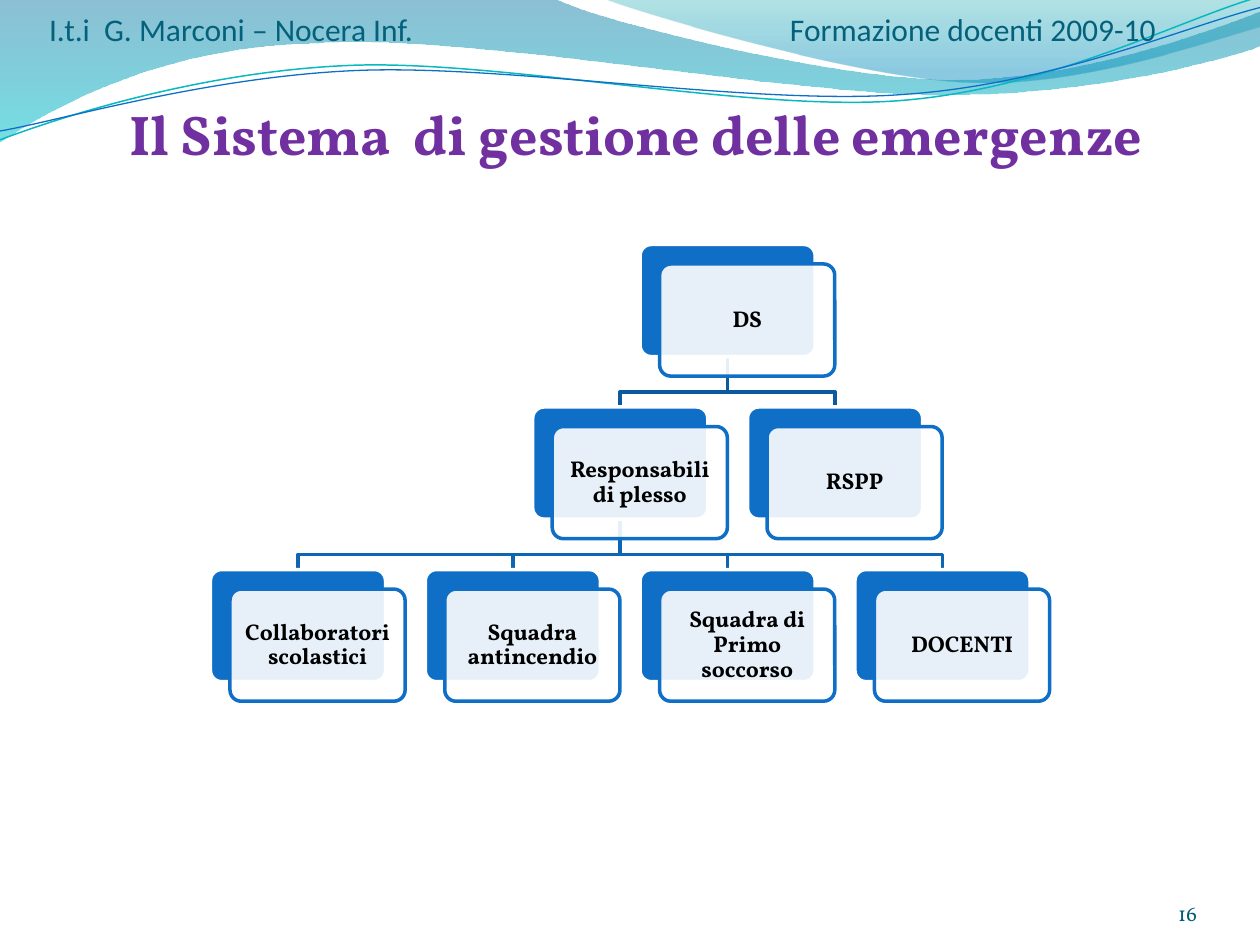
from lxml.etree import SubElement
from pptx import Presentation
from pptx.dml.color import RGBColor
from pptx.enum.shapes import MSO_SHAPE
from pptx.enum.text import MSO_ANCHOR, PP_ALIGN
from pptx.oxml.ns import qn
from pptx.util import Inches, Pt

BLUE = RGBColor(0x0F, 0x6F, 0xC6)
NAVY = RGBColor(0x0C, 0x59, 0x9F)
MID = RGBColor(0x0E, 0x65, 0xB4)
AQUA = RGBColor(0x0A, 0xB8, 0xBF)
TEAL = RGBColor(0x04, 0x61, 0x7B)
DARK = RGBColor(0x04, 0x5D, 0x75)
PURPLE = RGBColor(0x70, 0x30, 0xA0)
WHITE = RGBColor(0xFF, 0xFF, 0xFF)
BLACK = RGBColor(0, 0, 0)
SERIF, SANS = "Vollkorn", "Calibri"

# Chart grid: first card, pitch between cards, card size, front card offset
LEFT, TOP = 1.67, 1.94
COL, ROW = 1.705, 1.29
WIDE, HIGH = 1.39, 0.89
SHIFT = 0.155
DROP = 0.28

# name: (text, column, row, parent)
CARDS = {
    "ds": ("DS", 2, 0, None),
    "resp": ("Responsabili di plesso", 1.5, 1, "ds"),
    "coll": ("Collaboratori scolastici", 0, 2, "resp"),
    "fire": ("Squadra antincendio", 1, 2, "resp"),
    "aid": ("Squadra di Primo soccorso", 2, 2, "resp"),
    "doc": ("DOCENTI", 3, 2, "resp"),
    "rspp": ("RSPP", 2.5, 1, "ds"),
}

# A part of three points is a cubic curve, a part of one point a straight line.
# Each band: start, parts, gradient stops
BANDS = [
    ((0, 0),
     [[(4.4, -0.01)],
      [(4.76, 0.17), (6.64, 0.63), (7.58, 0.63)],
      [(8.53, 0.63), (9.58, 0.26), (10, 0.09)],
      [(10.01, 0.36)],
      [(9.83, 0.44), (8.7, 0.76), (7.46, 0.75)],
      [(6.22, 0.75), (3.82, 0.28), (2.57, 0.34)],
      [(1.29, 0.36), (0.46, 0.83), (-0.01, 1.13)]],
     [(0, RGBColor(0, 0x74, 0xA1), 45), (1, RGBColor(0, 0xC6, 0xCF), 55)]),
    ((4.79, -0.01),
     [[(5.09, 0.11), (6.82, 0.62), (7.69, 0.65)],
      [(8.56, 0.69), (9.61, 0.32), (10, 0.21)],
      [(10, 0)]],
     [(0, RGBColor(0, 0xA1, 0xA9), 30), (0.8, RGBColor(0, 0x8B, 0xBF), 45)]),
]
# Each wave: start, parts, colour, width
WAVES = [
    ((0, 1.11),
     [[(0.48, 0.93), (1.58, 0.57), (2.77, 0.52)],
      [(3.95, 0.47), (5.93, 0.89), (7.13, 0.8)],
      [(8.33, 0.71), (9.38, 0.15), (9.98, -0.02)]], AQUA, 0.85),
    ((0, 1.04),
     [[(0.47, 0.96), (1.64, 0.61), (2.83, 0.56)],
      [(4.03, 0.51), (5.97, 0.84), (7.17, 0.75)],
      [(8.36, 0.67), (9.41, 0.21), (10, 0.06)]], BLUE, 0.75),
]


def outline(slide, start, parts, close=False):
    """Draw lines, then join each three-point part into one curve."""
    pen = slide.shapes.build_freeform(*map(Inches, start))
    pts = [(Inches(x), Inches(y)) for part in parts for x, y in part]
    pen.add_line_segments(pts, close=close)
    shape = pen.convert_to_shape()
    shape.shadow.inherit = False
    lines = iter(list(shape._element.iter(qn("a:lnTo"))))
    for part in parts:
        group = [next(lines) for _ in part]
        if len(group) == 3:
            first = group[0]
            first.tag = qn("a:cubicBezTo")
            for node in group[1:]:
                first.append(node[0])
                node.getparent().remove(node)
    return shape


def fade(color, share):
    """Set the opacity, in percent, of every RGB colour under an element."""
    for node in color.iter(qn("a:srgbClr")):
        SubElement(node, qn("a:alpha"), val=str(share * 1000))


def add_band(slide, start, parts, stops):
    band = outline(slide, start, parts, close=True)
    band.line.fill.background()
    band.fill.gradient()
    band.fill.gradient_angle = 270
    nodes = band._element.spPr.iter(qn("a:gs"))
    for stop, node, (at, color, share) in zip(
            band.fill.gradient_stops, nodes, stops):
        stop.position = at
        stop.color.rgb = color
        fade(node, share)


def add_line(slide, start, parts, color, width):
    line = outline(slide, start, parts)
    line.fill.background()
    line.line.color.rgb = color
    line.line.width = Pt(width)


def write(frame, text, size, color, font=SERIF, bold=False,
          align=PP_ALIGN.LEFT, anchor=MSO_ANCHOR.BOTTOM, pads=(0, 0.05, 0, 0)):
    frame.word_wrap = True
    frame.vertical_anchor = anchor
    (frame.margin_left, frame.margin_top,
     frame.margin_right, frame.margin_bottom) = map(Inches, pads)
    para = frame.paragraphs[0]
    para.alignment = align
    run = para.add_run()
    run.text = text
    run.font.size, run.font.bold, run.font.name = Pt(size), bold, font
    run.font.color.rgb = color
    return para


def place(col, row):
    return LEFT + col * COL, TOP + row * ROW


def add_plate(slide, x, y, fill, edge):
    plate = slide.shapes.add_shape(
        MSO_SHAPE.ROUNDED_RECTANGLE, *map(Inches, (x, y, WIDE, HIGH)))
    plate.adjustments[0] = 0.1
    plate.shadow.inherit = False
    plate.fill.solid()
    plate.fill.fore_color.rgb = fill
    plate.line.color.rgb = edge
    plate.line.width = Pt(2)
    return plate


def add_card(slide, text, col, row):
    x, y = place(col, row)
    add_plate(slide, x, y, BLUE, WHITE)
    front = add_plate(slide, x + SHIFT, y + SHIFT, WHITE, BLUE)
    fade(front._element.spPr.find(qn("a:solidFill")), 90)
    para = write(front.text_frame, text, 13, BLACK, bold=True,
                 align=PP_ALIGN.CENTER, anchor=MSO_ANCHOR.MIDDLE,
                 pads=(0.05,) * 4)
    para.line_spacing = 0.9


def add_link(slide, col, row, boss):
    _, over, up, _ = CARDS[boss]
    x, y = place(over, up)
    end, low = place(col, row)
    x, end, y = x + WIDE / 2, end + WIDE / 2, y + HIGH
    add_line(slide, (x, y),
             [[(x, y + DROP)], [(end, y + DROP)], [(end, low)]],
             MID if up else NAVY, 2)


def add_label(slide, box, *args, **opts):
    label = slide.shapes.add_textbox(*map(Inches, box))
    return write(label.text_frame, *args, **opts)


def add_title(slide, text):
    title = slide.shapes.title
    title.left, title.top, title.width, title.height = map(
        Inches, (0.55, 0.94, 9, 0.38))
    write(title.text_frame, text, 32, PURPLE, bold=True,
          align=PP_ALIGN.CENTER)
    title._element.getparent().append(title._element)


def main():
    deck = Presentation()
    deck.slide_width, deck.slide_height = Inches(10), Inches(7.5)
    slide = deck.slides.add_slide(deck.slide_layouts[5])
    for band in BANDS:
        add_band(slide, *band)
    for wave in WAVES:
        add_line(slide, *wave)
    for _, col, row, boss in reversed(CARDS.values()):
        if boss:
            add_link(slide, col, row, boss)
    for text, col, row, _ in CARDS.values():
        add_card(slide, text, col, row)
    add_title(slide, "Il Sistema  di gestione delle emergenze")
    head = add_label(slide, (0.39, 0, 9, 0.38),
                     "I.t.i  G. Marconi – Nocera Inf.\tFormazione docenti 2009-10",
                     18, TEAL, font=SANS)
    tabs = SubElement(head._p.get_or_add_pPr(), qn("a:tabLst"))
    SubElement(tabs, qn("a:tab"), pos=str(Inches(5.88)), algn="l")
    add_label(slide, (8.67, 6.95, 0.83, 0.4), "16", 12, DARK,
              align=PP_ALIGN.RIGHT, pads=(0,) * 4)
    deck.save("out.pptx")


if __name__ == "__main__":
    main()
